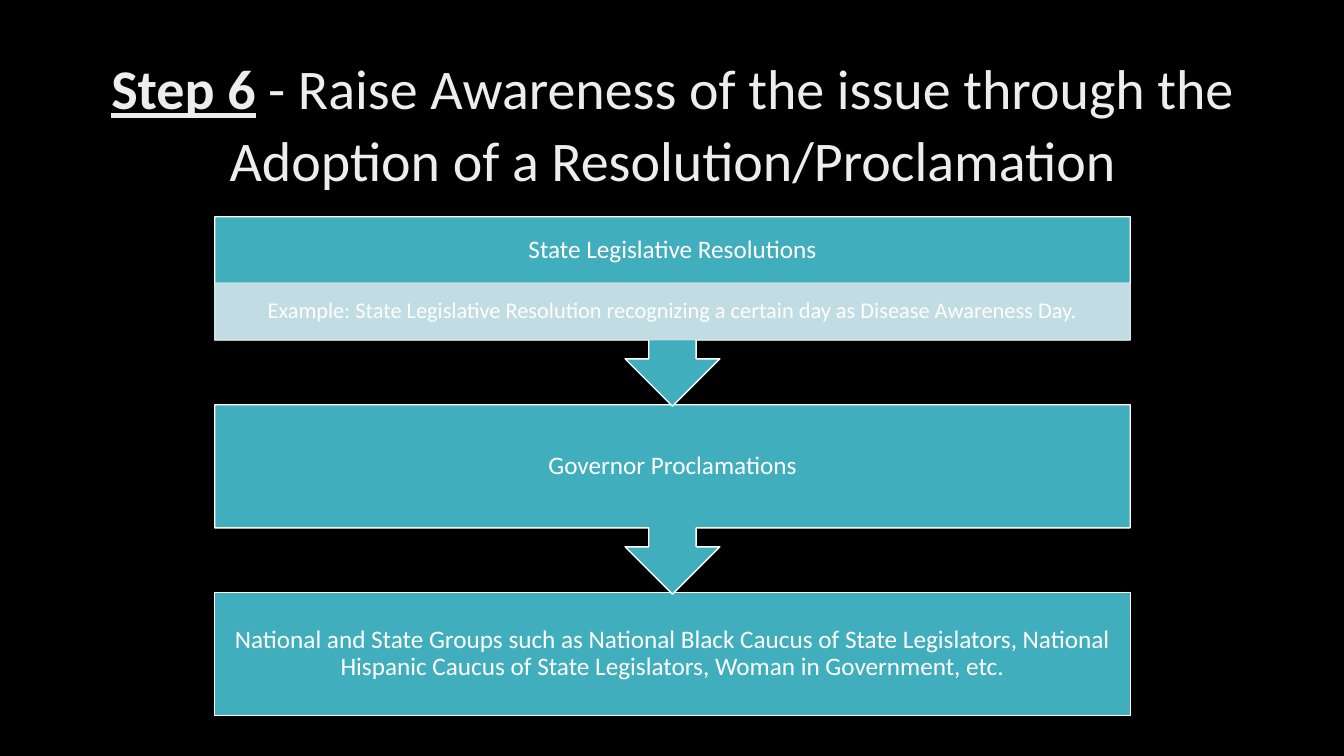
"""Build the Step 6 slide: a descending flow of resolutions and proclamations."""
from lxml import etree
from pptx import Presentation
from pptx.dml.color import RGBColor
from pptx.enum.shapes import MSO_SHAPE
from pptx.enum.text import MSO_ANCHOR, PP_ALIGN
from pptx.oxml.ns import qn
from pptx.util import Inches, Pt

RECTANGLE = MSO_SHAPE.RECTANGLE
CALLOUT = MSO_SHAPE.DOWN_ARROW_CALLOUT
MIDDLE = MSO_ANCHOR.MIDDLE
CENTER = PP_ALIGN.CENTER

TITLE = [
    ("Step 6", True),
    (" - Raise Awareness of the issue through the Adoption of a Resolution/Proclamation", False),
]
STAGES = [
    "State Legislative Resolutions",
    "Governor Proclamations",
    "National and State Groups such as National Black Caucus of State Legislators, "
    "National Hispanic Caucus of State Legislators, Woman in Government, etc.",
]
EXAMPLE = "Example: State Legislative Resolution recognizing a certain day as Disease Awareness Day."

COLORS = {"background": "000000", "title": "EDEDED", "stage": "41AEBD",
          "example": "CFE3E8", "white": "FFFFFF"}
FONT = "Calibri"
WIDTH, HEIGHT = 13.33, 7.5
FLOW_LEFT, FLOW_TOP, FLOW_WIDTH = 2.13, 2.15, 9.08
STAGE_STEP, STAGE_HEIGHT, CALLOUT_HEIGHT = 1.865, 1.22, 1.88
EXAMPLE_HEIGHT = 0.56
PADDING = 0.14


def color(name):
    return RGBColor.from_string(COLORS[name])


def write(shape, spans, size, ink="white", spacing=0.9, after=0, insets=(PADDING,) * 4):
    frame = shape.text_frame
    frame.word_wrap = True
    frame.vertical_anchor = MIDDLE
    frame.margin_left, frame.margin_top, frame.margin_right, frame.margin_bottom = map(Inches, insets)
    para = frame.paragraphs[0]
    para.alignment = CENTER
    para.line_spacing = spacing
    para.space_after = Pt(after)
    for text, strong in spans:
        span = para.add_run()
        span.text = text
        span.font.name = FONT
        span.font.size = Pt(size)
        span.font.bold = span.font.underline = strong
        span.font.color.rgb = color(ink)


def add_block(page, kind, top, height, fill, opacity=100):
    block = page.shapes.add_shape(kind, Inches(FLOW_LEFT), Inches(top),
                                  Inches(FLOW_WIDTH), Inches(height))
    block.shadow.inherit = False
    block.fill.solid()
    block.fill.fore_color.rgb = color(fill)
    block.line.color.rgb = color("white" if opacity == 100 else fill)
    block.line.width = Pt(1)
    if opacity < 100:
        for tone in block._element.spPr.iter(qn("a:srgbClr")):
            etree.SubElement(tone, qn("a:alpha"), val=str(opacity * 1000))
    return block


def main():
    deck = Presentation()
    deck.slide_width, deck.slide_height = Inches(WIDTH), Inches(HEIGHT)
    page = deck.slides.add_slide(deck.slide_layouts[6])
    page.background.fill.solid()
    page.background.fill.fore_color.rgb = color("background")

    title = page.shapes.add_textbox(Inches(0.92), Inches(0.4), Inches(11.5), Inches(1.6))
    write(title, TITLE, 40, ink="title", spacing=1.07, after=8, insets=(0.1, 0.05, 0.1, 0.05))

    last = len(STAGES) - 1
    for index in range(last, -1, -1):
        kind, height = (RECTANGLE, STAGE_HEIGHT) if index == last else (CALLOUT, CALLOUT_HEIGHT)
        stage = add_block(page, kind, FLOW_TOP + index * STAGE_STEP, height, "stage")
        bottom = PADDING + (EXAMPLE_HEIGHT if index == 0 else 0)
        write(stage, [(STAGES[index], False)], 18, insets=(PADDING, PADDING, PADDING, bottom))

    example_top = FLOW_TOP + STAGE_HEIGHT - EXAMPLE_HEIGHT
    example = add_block(page, RECTANGLE, example_top, EXAMPLE_HEIGHT, "example", opacity=90)
    write(example, [(EXAMPLE, False)], 16, insets=(0.12, 0.02, 0.12, 0.02))

    deck.save("out.pptx")


if __name__ == "__main__":
    main()
